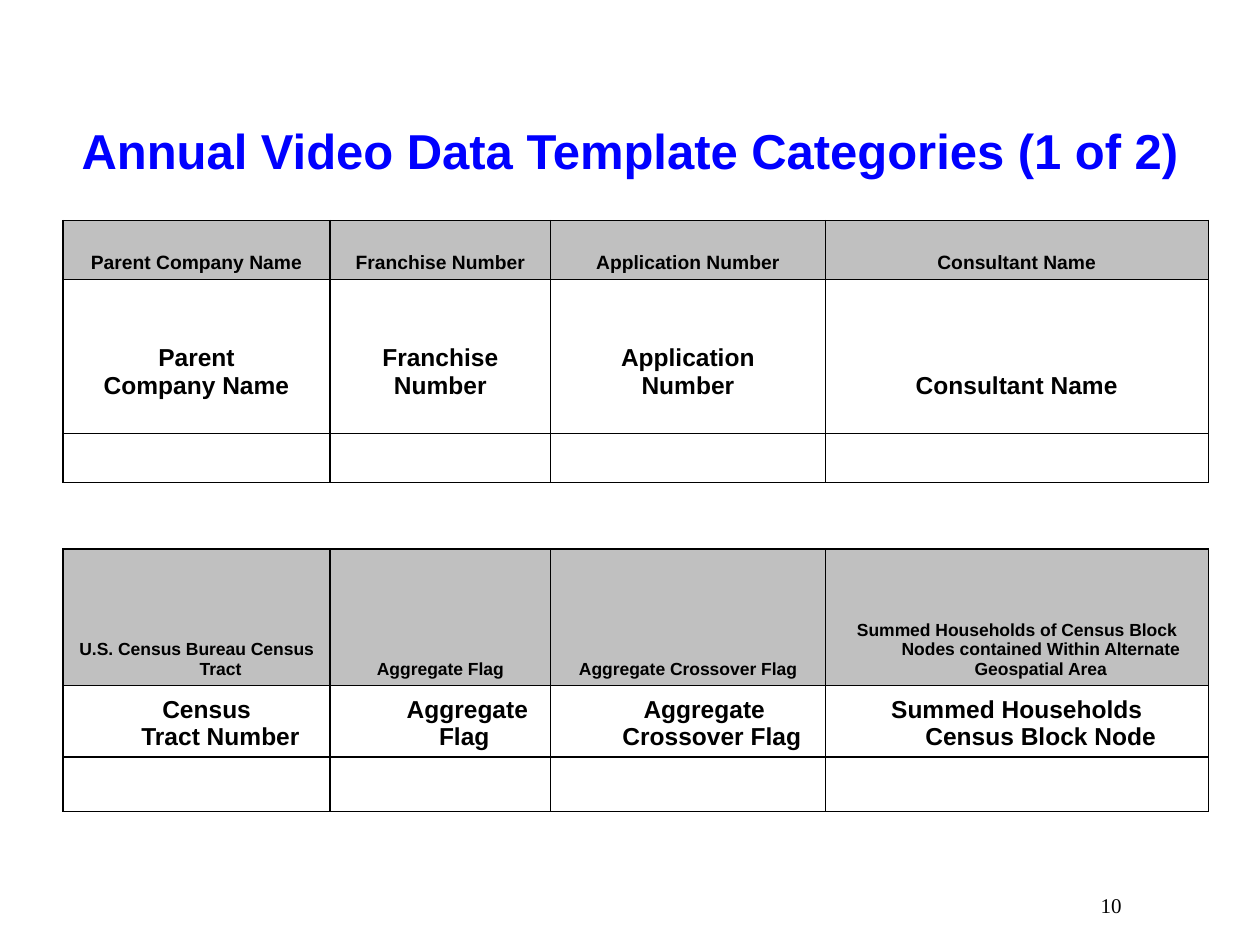
"""Build the slide of annual video data template categories."""
from lxml.etree import SubElement
from pptx import Presentation
from pptx.dml.color import RGBColor
from pptx.enum.text import MSO_ANCHOR as Anchor, PP_ALIGN as Align
from pptx.oxml.ns import qn
from pptx.util import Inches, Pt

COLORS = {"title": "0000FF", "text": "000000", "header": "C0C0C0"}
HANGING = 0.38
GAP_ROW = 3
COLUMN_WIDTHS = [2.12, 1.75, 2.18, 3.04]
ROW_HEIGHTS = [0.47, 1.22, 0.39, 0.53, 1.08, 0.57, 0.43]
ROWS = {
    0: ["Parent Company Name", "Franchise Number", "Application Number", "Consultant Name"],
    1: ["Parent\nCompany Name", "Franchise\nNumber", "Application\nNumber", "Consultant Name"],
    4: ["U.S. Census Bureau Census Tract", "Aggregate Flag", "Aggregate Crossover Flag",
        "Summed Households of Census Block Nodes contained Within Alternate Geospatial Area"],
    5: ["Census\vTract Number", "Aggregate\vFlag", "Aggregate\vCrossover Flag",
        "Summed Households\vCensus Block Node"],
}
SIZES = {0: 11, 1: 14, 4: 10, 5: 14}
HEADER_ROWS = (0, 4)
FIRST_LINE_INDENTS = {(5, 0): -0.22, (5, 1): 0.05, (5, 2): -0.12}


def add_text(para, text, size, color, font="Arial", bold=True):
    for index, line in enumerate(text.split("\v")):
        if index:
            para.add_line_break()
        span = para.add_run()
        span.text = line
        span.font.name, span.font.size, span.font.bold = font, Pt(size), bold
        span.font.color.rgb = RGBColor.from_string(COLORS[color])


def set_border(cell, side, visible):
    line = SubElement(cell._tc.get_or_add_tcPr(), qn(f"a:ln{side}"), w=str(Pt(1)))
    if visible:
        fill = SubElement(line, qn("a:solidFill"))
        SubElement(fill, qn("a:srgbClr"), val=COLORS["text"])
    else:
        SubElement(line, qn("a:noFill"))


deck = Presentation()
deck.slide_width, deck.slide_height = Inches(10), Inches(7.5)
page = deck.slides.add_slide(deck.slide_layouts[5])

title = page.shapes.title
title.left, title.top, title.width, title.height = map(Inches, (0.5, 0.83, 9, 0.72))
title.text_frame.vertical_anchor = Anchor.MIDDLE
para = title.text_frame.paragraphs[0]
para.alignment = Align.CENTER
add_text(para, "Annual Video Data Template Categories (1 of 2)", 28, "title")

table = page.shapes.add_table(
    len(ROW_HEIGHTS), len(COLUMN_WIDTHS), Inches(0.5), Inches(1.75),
    Inches(sum(COLUMN_WIDTHS)), Inches(sum(ROW_HEIGHTS))).table
table.first_row = table.horz_banding = False
for column, width in zip(table.columns, COLUMN_WIDTHS):
    column.width = Inches(width)

for row_index, height in enumerate(ROW_HEIGHTS):
    table.rows[row_index].height = Inches(height)
    for column_index in range(len(COLUMN_WIDTHS)):
        cell = table.cell(row_index, column_index)
        for side in "LRTB":
            set_border(cell, side, row_index != GAP_ROW or side in "TB")
        if row_index in HEADER_ROWS:
            cell.fill.solid()
            cell.fill.fore_color.rgb = RGBColor.from_string(COLORS["header"])
        else:
            cell.fill.background()
        cell.vertical_anchor = Anchor.BOTTOM
        cell.margin_bottom = Inches(0.27 if row_index == 1 else 0.05)
        if row_index not in ROWS:
            cell.text_frame.paragraphs[0].font.size = Pt(10)
            continue
        indent = FIRST_LINE_INDENTS.get((row_index, column_index), -HANGING)
        for index, text in enumerate(ROWS[row_index][column_index].split("\n")):
            frame = cell.text_frame
            para = frame.add_paragraph() if index else frame.paragraphs[0]
            para.alignment = Align.CENTER
            properties = para._p.get_or_add_pPr()
            properties.set("marL", str(Inches(HANGING)))
            properties.set("indent", str(Inches(indent)))
            add_text(para, text, SIZES[row_index], "text")

number_box = page.shapes.add_textbox(Inches(7.17), Inches(6.83), Inches(1.83), Inches(0.5))
number_box.text_frame.word_wrap = True
number_box.text_frame.vertical_anchor = Anchor.BOTTOM
para = number_box.text_frame.paragraphs[0]
para.alignment = Align.RIGHT
add_text(para, "10", 12, "text", "Times New Roman", False)

deck.save("out.pptx")
